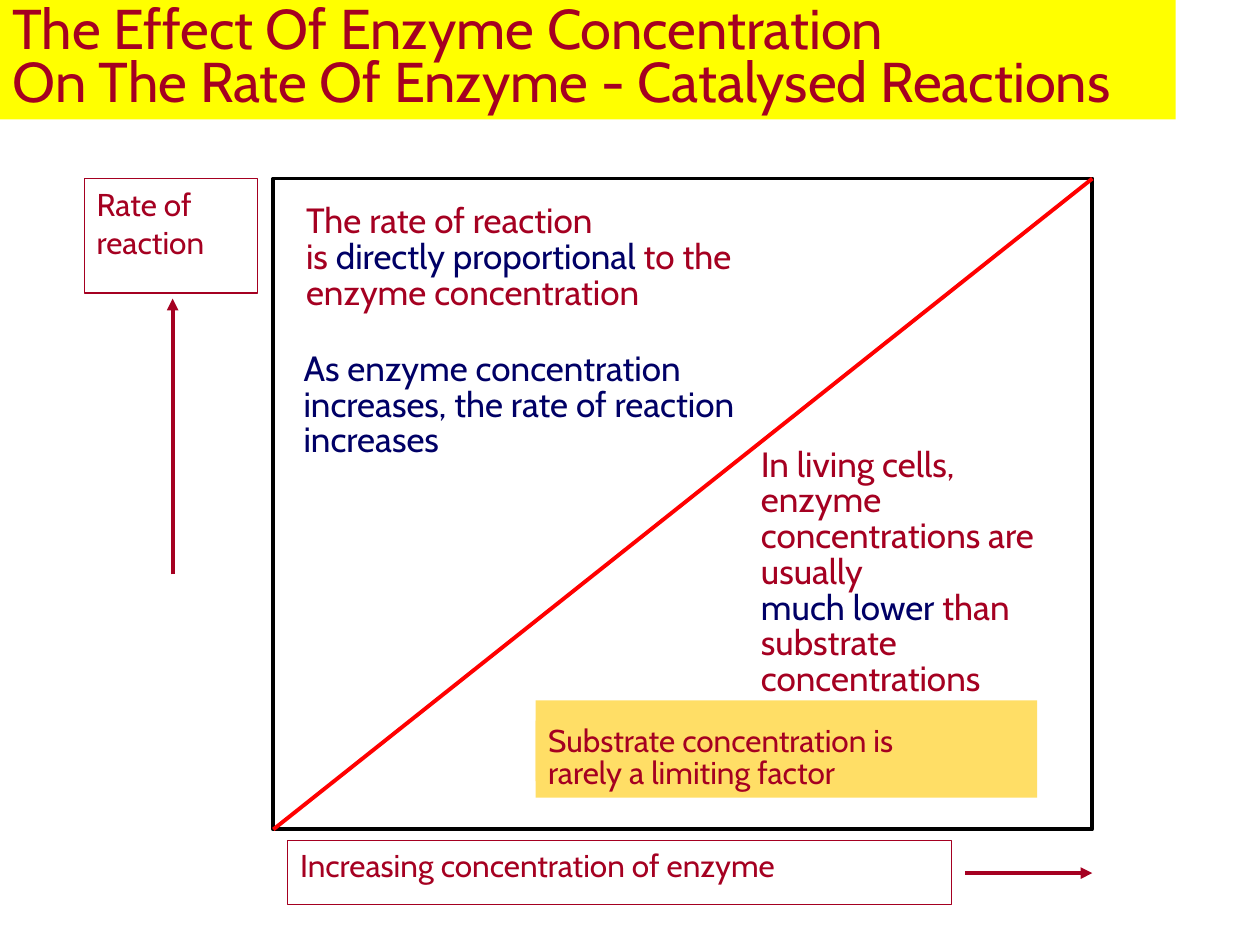
"""Build a slide on how enzyme concentration affects the rate of reaction."""
from lxml import etree
from pptx import Presentation
from pptx.dml.color import RGBColor
from pptx.enum.shapes import MSO_CONNECTOR, MSO_SHAPE
from pptx.enum.text import MSO_ANCHOR, PP_ALIGN
from pptx.oxml.ns import qn
from pptx.util import Cm, Pt

RECTANGLE = MSO_SHAPE.RECTANGLE
STRAIGHT = MSO_CONNECTOR.STRAIGHT
TOP = MSO_ANCHOR.TOP
LEFT = PP_ALIGN.LEFT

FONT = "Cabin"
CRIMSON, NAVY, BLACK, RED = "A50021", "000066", "000000", "FF0000"
YELLOW, GOLD = "FFFF00", "FFDE66"

PLOT_LEFT, PLOT_TOP, PLOT_WIDTH, PLOT_HEIGHT = 5.51, 3.6, 16.51, 13.12
PLOT_RIGHT, PLOT_BOTTOM = PLOT_LEFT + PLOT_WIDTH, PLOT_TOP + PLOT_HEIGHT

BOXES = [
    {"at": (0, 0, 23.7, 2.41), "fill": YELLOW, "size": 32, "spacing": 0.8,
     "text": [["The Effect Of Enzyme Concentration"],
              ["On The Rate Of Enzyme - Catalysed Reactions"]]},
    {"at": (PLOT_LEFT, PLOT_TOP, PLOT_WIDTH, PLOT_HEIGHT), "line": (BLACK, 2.25)},
    {"at": (1.7, PLOT_TOP, 3.5, 2.31), "line": (CRIMSON, 0.75), "size": 18,
     "spacing": 1.0, "text": [["Rate of"], ["reaction"]]},
    {"at": (5.8, 16.94, 13.39, 1.3), "line": (CRIMSON, 0.75), "size": 18,
     "spacing": 1.0, "text": [["Increasing concentration of enzyme"]]},
    {"at": (10.8, 14.12, 10.11, 1.96), "fill": GOLD},
    {"at": (10.8, 14.53, 9.7, 1.22), "fill": GOLD, "size": 18,
     "text": [["Substrate concentration is"], ["rarely a limiting factor"]]},
]
LINES = [
    ((3.48, 11.58), (3.48, 6.02), CRIMSON, True),
    ((19.46, 17.6), (PLOT_RIGHT, 17.6), CRIMSON, True),
    ((PLOT_LEFT, PLOT_BOTTOM), (PLOT_RIGHT, PLOT_TOP), RED, False),
]
NOTES = [
    {"at": (5.92, 4.01, 9.53, 2.41),
     "text": [["The rate of reaction"],
              ["is ", ("directly proportional", NAVY), " to the"],
              ["enzyme concentration"]]},
    {"at": (5.87, 6.99, 9.5, 2.41), "color": NAVY,
     "text": [["As enzyme concentration"], ["increases, the rate of reaction"],
              ["increases"]]},
    {"at": (15.09, 8.92, 6.6, 5.33),
     "text": [["In living cells, enzyme"], ["concentrations are usually"],
              [("much lower ", NAVY), "than substrate"], ["concentrations"]]},
]


def rgb(value):
    """Turn a hex string into a colour."""
    return RGBColor.from_string(value)


def set_attributes(target, values):
    """Set each named attribute on the target."""
    for name, value in values.items():
        setattr(target, name, value)


def write_text(shape, box):
    """Fill a shape with paragraphs of coloured runs."""
    frame = shape.text_frame
    set_attributes(frame, {"word_wrap": True, "vertical_anchor": TOP})
    for index, pieces in enumerate(box["text"]):
        paragraph = frame.add_paragraph() if index else frame.paragraphs[0]
        set_attributes(paragraph, {"alignment": LEFT,
                                   "line_spacing": box.get("spacing", 0.85)})
        for piece in pieces:
            default = box.get("color", CRIMSON)
            text, color = (piece, default) if isinstance(piece, str) else piece
            run = paragraph.add_run()
            run.text = text
            set_attributes(run.font, {"name": FONT, "size": Pt(box.get("size", 20))})
            run.font.color.rgb = rgb(color)


def add_box(slide, box):
    """Add a rectangle with optional fill, outline and text."""
    shape = slide.shapes.add_shape(RECTANGLE, *map(Cm, box["at"]))
    shape.shadow.inherit = False
    if "fill" in box:
        shape.fill.solid()
        shape.fill.fore_color.rgb = rgb(box["fill"])
    else:
        shape.fill.background()
    if "line" in box:
        color, width = box["line"]
        shape.line.color.rgb = rgb(color)
        shape.line.width = Pt(width)
    else:
        shape.line.fill.background()
    if "text" in box:
        write_text(shape, box)


def add_line(slide, start, end, color, arrow):
    """Add a straight line, with an arrowhead at its end if asked."""
    connector = slide.shapes.add_connector(STRAIGHT, *map(Cm, start + end))
    connector.line.color.rgb = rgb(color)
    connector.line.width = Pt(2.25)
    properties = connector._element.spPr
    if arrow:
        etree.SubElement(properties.find(qn("a:ln")), qn("a:tailEnd"), type="triangle")
    etree.SubElement(properties, qn("a:effectLst"))


def main():
    """Build and save the slide."""
    presentation = Presentation()
    set_attributes(presentation, {"slide_width": Cm(25.4), "slide_height": Cm(19.05)})
    slide = presentation.slides.add_slide(presentation.slide_layouts[6])
    for box in BOXES[:4]:
        add_box(slide, box)
    for line in LINES:
        add_line(slide, *line)
    for note in NOTES:
        write_text(slide.shapes.add_textbox(*map(Cm, note["at"])), note)
    for box in BOXES[4:]:
        add_box(slide, box)
    presentation.save("out.pptx")


if __name__ == "__main__":
    main()
